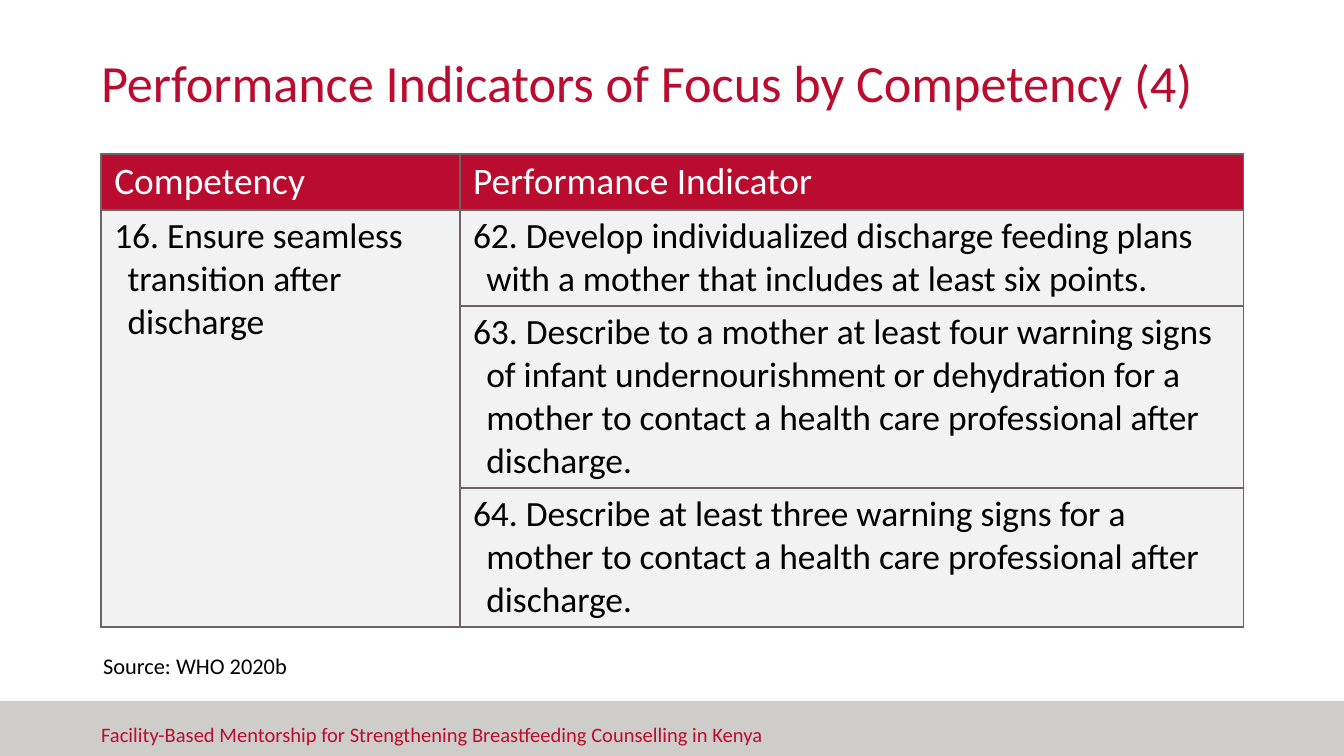
import dataclasses

import lxml.etree
import pptx
import pptx.dml.color
import pptx.enum.shapes
import pptx.enum.text
import pptx.oxml.ns
import pptx.util
from pptx.util import Cm

RED, GREY, PALE, LINE = "BA0C2F", "CFCDC9", "F2F2F2", "6C6463"
WHITE, BLACK = "FFFFFF", "000000"
LEFT, WIDTH = 1.91, 21.59
ANCHOR = pptx.enum.text.MSO_ANCHOR

HEADINGS = ("Competency", "Performance Indicator")
COMPETENCY = "16. Ensure seamless transition after discharge"
INDICATORS = (
    "62. Develop individualized discharge feeding plans with a mother that "
    "includes at least six points.",
    "63. Describe to a mother at least four warning signs of infant "
    "undernourishment or dehydration for a mother to contact a health care "
    "professional after discharge.",
    "64. Describe at least three warning signs for a mother to contact a "
    "health care professional after discharge.",
)
COLUMN_WIDTHS = (6.78, WIDTH - 6.78)
ROW_HEIGHTS = (1.06, 1.81, 3.44, 2.63)


@dataclasses.dataclass
class Label:
    """A line of text; lengths in centimetres, size in points."""
    text: str
    left: float
    top: float
    width: float
    height: float
    size: float
    colour: str
    inset: tuple[float, float] = (0, 0.13)
    anchor: ANCHOR = ANCHOR.TOP


@dataclasses.dataclass
class CellStyle:
    fill: str
    colour: str
    size: float
    hanging: bool


HEADER = CellStyle(RED, WHITE, 20, False)
BODY = CellStyle(PALE, BLACK, 19, True)

LABELS = (
    Label("Facility-Based Mentorship for Strengthening Breastfeeding "
          "Counselling in Kenya", LEFT, 13.51, 13.36, 1.19, 11, RED),
    Label("Performance Indicators of Focus by Competency (4)",
          LEFT, 0.71, WIDTH, 1.42, 28, RED, (0, 0), ANCHOR.BOTTOM),
    Label("Source: WHO 2020b", 1.7, 12.19, 17.63, 0.76, 12, BLACK, (0.25, 0.13)),
)


def rgb(colour: str) -> pptx.dml.color.RGBColor:
    return pptx.dml.color.RGBColor.from_string(colour)


def assign(target, values: dict) -> None:
    for name, value in values.items():
        setattr(target, name, value)


def write(para, text: str, size: float, colour: str) -> None:
    span = para.add_run()
    span.text = text
    assign(span.font, {"name": "Calibri", "size": pptx.util.Pt(size), "bold": False})
    span.font.color.rgb = rgb(colour)


def add_label(page, label: Label) -> None:
    box = page.shapes.add_textbox(
        *map(Cm, (label.left, label.top, label.width, label.height)))
    side, vertical = map(Cm, label.inset)
    assign(box.text_frame, {
        "word_wrap": True, "vertical_anchor": label.anchor,
        "margin_left": side, "margin_right": side,
        "margin_top": vertical, "margin_bottom": vertical,
    })
    write(box.text_frame.paragraphs[0], label.text, label.size, label.colour)


def add_borders(cell) -> None:
    properties = cell._tc.get_or_add_tcPr()
    qn = pptx.oxml.ns.qn
    for side in "LRTB":
        line = lxml.etree.SubElement(
            properties, qn(f"a:ln{side}"), w=str(pptx.util.Pt(1)))
        fill = lxml.etree.SubElement(line, qn("a:solidFill"))
        lxml.etree.SubElement(fill, qn("a:srgbClr"), val=LINE)


def format_cell(cell, text: str, style: CellStyle) -> None:
    add_borders(cell)
    cell.fill.solid()
    cell.fill.fore_color.rgb = rgb(style.fill)
    assign(cell, {
        "margin_left": Cm(0.25), "margin_right": Cm(0.25),
        "margin_top": Cm(0.09), "margin_bottom": Cm(0.09),
    })
    para = cell.text_frame.paragraphs[0]
    if style.hanging:
        properties = para._p.get_or_add_pPr()
        properties.set("marL", str(Cm(0.25)))
        properties.set("indent", str(-Cm(0.25)))
    if text:
        write(para, text, style.size, style.colour)


def add_indicator_table(page) -> None:
    rows = [HEADINGS, *zip((COMPETENCY, "", ""), INDICATORS)]
    table = page.shapes.add_table(
        len(rows), len(HEADINGS), Cm(LEFT), Cm(2.91), Cm(WIDTH),
        Cm(sum(ROW_HEIGHTS))).table
    table.horz_banding = False
    for column, width in zip(table.columns, COLUMN_WIDTHS):
        column.width = Cm(width)
    for row, height in zip(table.rows, ROW_HEIGHTS):
        row.height = Cm(height)
    for index, texts in enumerate(rows):
        for cell, text in zip(table.rows[index].cells, texts):
            format_cell(cell, text, BODY if index else HEADER)
    table.cell(1, 0).merge(table.cell(len(rows) - 1, 0))


def add_footer_band(page) -> None:
    band = page.shapes.add_shape(
        pptx.enum.shapes.MSO_SHAPE.RECTANGLE, 0, Cm(13.25), Cm(25.4), Cm(1.04))
    band.shadow.inherit = False
    band.fill.solid()
    band.fill.fore_color.rgb = rgb(GREY)
    band.line.fill.background()


def main() -> None:
    deck = pptx.Presentation()
    assign(deck, {"slide_width": Cm(25.4), "slide_height": Cm(14.29)})
    page = deck.slides.add_slide(deck.slide_layouts[6])
    add_footer_band(page)
    for label in LABELS:
        add_label(page, label)
    add_indicator_table(page)
    deck.save("out.pptx")


if __name__ == "__main__":
    main()
